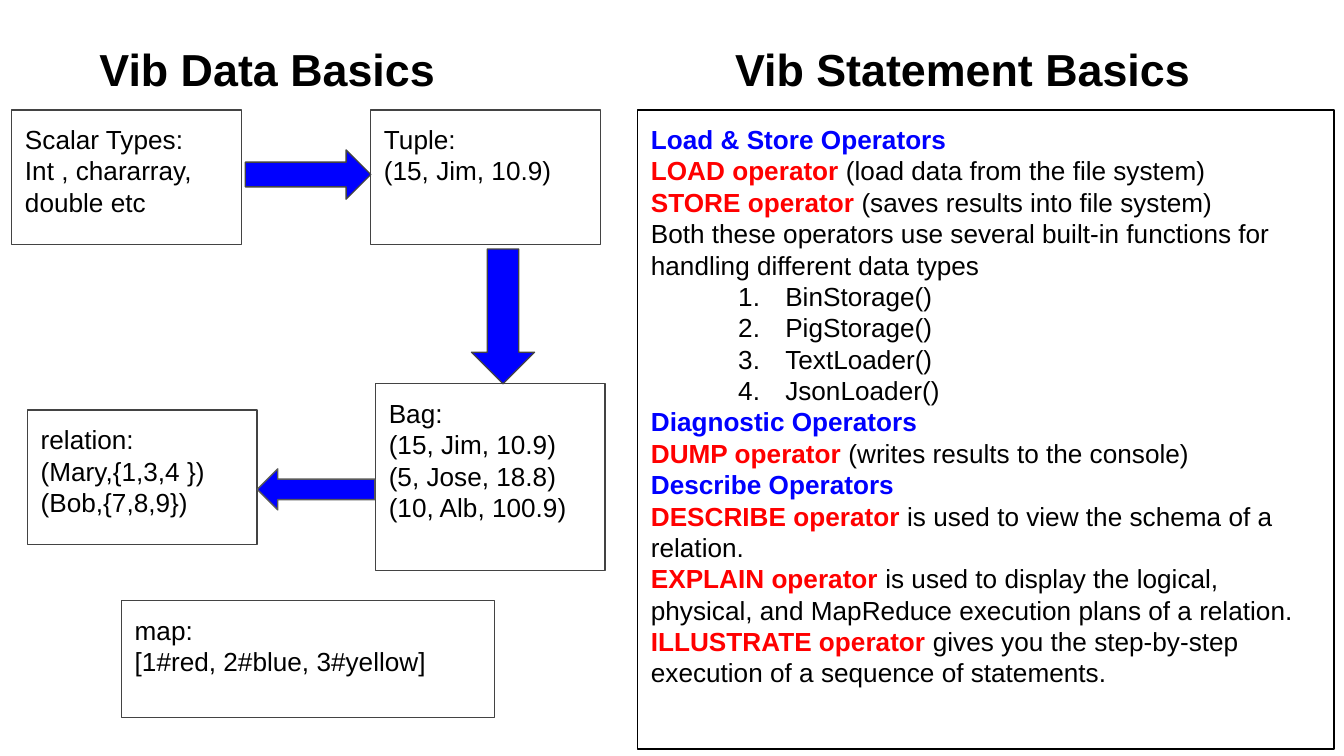
from pptx import Presentation
from pptx.dml.color import RGBColor
from pptx.enum.shapes import MSO_SHAPE
from pptx.enum.text import MSO_ANCHOR, MSO_AUTO_SIZE, PP_ALIGN
from pptx.oxml.ns import qn
from pptx.util import Pt

THEME = {
    "font": "Arial", "title": 24, "body": 14, "inset": 7.2, "line": 0.75,
    "text": "000000", "heading": "0000FF", "operator": "FF0000",
    "arrow": "0000FF", "border": "434343", "soft": "595959",
}
INDENT, HANGING = 72, 25.2
BOX_W, BOX_H, TOP = 123, 72, 58.9

TITLES = [
    ("Vib Data Basics", (46.1, 15.1, 229, 37.4)),
    ("Vib Statement Basics", (386.6, 15.1, 283, 37.4)),
]
BOXES = [
    (["Scalar Types:", "Int , chararray, double etc"], (6.3, TOP, BOX_W, BOX_H)),
    (["Tuple:", "(15, Jim, 10.9)"], (198.6, TOP, BOX_W, BOX_H)),
    (["Bag:", "(15, Jim, 10.9)", "(5, Jose, 18.8)", "(10, Alb, 100.9)"],
     (201.2, 205.6, BOX_W, 100)),
    (["relation:", "(Mary,{1,3,4 })", "(Bob,{7,8,9})"], (14.7, 219.7, BOX_W, BOX_H)),
    (["map:", "[1#red, 2#blue, 3#yellow]"], (65.1, 321.8, 200, 62.8)),
]
ARROWS = [
    (MSO_SHAPE.RIGHT_ARROW, (131.4, 80.3, 67.2, 26.4), "border"),
    (MSO_SHAPE.DOWN_ARROW, (252.6, 133.4, 33.8, 72.2), "border"),
    (MSO_SHAPE.LEFT_ARROW, (137.8, 251.2, 63, 22), "soft"),
]
STATEMENTS_AT = (341.5, TOP, 373.2, 342.4)
STATEMENTS = [
    ("heading", "Load & Store Operators", ""),
    ("operator", "LOAD operator", " (load data from the file system)"),
    ("operator", "STORE operator", " (saves results into file system)"),
    ("text", "", "Both these operators use several built-in functions for "
                 "handling different data types"),
    ("number", "", "BinStorage()"),
    ("number", "", "PigStorage()"),
    ("number", "", "TextLoader()"),
    ("number", "", "JsonLoader()"),
    ("heading", "Diagnostic Operators", ""),
    ("operator", "DUMP operator", " (writes results to the console)"),
    ("heading", "Describe Operators", ""),
    ("operator", "DESCRIBE operator", " is used to view the schema of a relation."),
    ("operator", "EXPLAIN operator", " is used to display the logical, physical, "
                                     "and MapReduce execution plans of a relation."),
    ("operator", "ILLUSTRATE operator", " gives you the step-by-step execution of "
                                        "a sequence of statements."),
]


def color(name):
    return RGBColor.from_string(THEME[name])


def place(sp, at):
    for name, value in zip(("left", "top", "width", "height"), at):
        setattr(sp, name, Pt(value))


def outline(sp, name):
    sp.line.width = Pt(THEME["line"])
    sp.line.color.rgb = color(name)


def number(p):
    pPr = p._p.get_or_add_pPr()
    pPr.set("marL", str(Pt(INDENT)))
    pPr.set("indent", str(-Pt(HANGING)))
    bullet = pPr.makeelement(qn("a:buAutoNum"), {"type": "arabicPeriod"})
    pPr.append(bullet)


def write(sp, paragraphs, size="body"):
    tf = sp.text_frame
    inset = Pt(THEME["inset"])
    frame = {
        "word_wrap": True, "auto_size": MSO_AUTO_SIZE.NONE,
        "vertical_anchor": MSO_ANCHOR.TOP,
        "margin_left": inset, "margin_right": inset,
        "margin_top": inset, "margin_bottom": inset,
    }
    for name, value in frame.items():
        setattr(tf, name, value)
    for i, (kind, lead, rest) in enumerate(paragraphs):
        p = tf.add_paragraph() if i else tf.paragraphs[0]
        layout = {"alignment": PP_ALIGN.LEFT, "space_before": Pt(0), "space_after": Pt(0)}
        for name, value in layout.items():
            setattr(p, name, value)
        if kind == "number":
            number(p)
        for text, bold, ink in ((lead, True, kind), (rest, False, "text")):
            if text:
                r = p.add_run()
                r.text = text
                style = {"name": THEME["font"], "size": Pt(THEME[size]), "bold": bold}
                for name, value in style.items():
                    setattr(r.font, name, value)
                r.font.color.rgb = color(ink)


def add_shape(s, kind, at, border):
    sp = s.shapes.add_shape(kind, *map(Pt, at))
    sp.shadow.inherit = False
    outline(sp, border)
    return sp


def main():
    prs = Presentation()
    prs.slide_width, prs.slide_height = Pt(720), Pt(405)
    s = prs.slides.add_slide(prs.slide_layouts[4])
    holders = {ph.placeholder_format.idx: ph for ph in s.placeholders}
    for idx in (2, 4):
        sp = holders[idx].element
        sp.getparent().remove(sp)

    for idx, (text, at) in enumerate(TITLES):
        place(holders[idx], at)
        write(holders[idx], [("text", text, "")], "title")

    for lines, at in BOXES:
        sp = add_shape(s, MSO_SHAPE.RECTANGLE, at, "border")
        sp.fill.background()
        write(sp, [("text", "", line) for line in lines])

    for kind, at, border in ARROWS:
        sp = add_shape(s, kind, at, border)
        sp.fill.solid()
        sp.fill.fore_color.rgb = color("arrow")

    statements = holders[3]
    place(statements, STATEMENTS_AT)
    outline(statements, "text")
    write(statements, STATEMENTS)
    prs.save("out.pptx")


if __name__ == "__main__":
    main()
